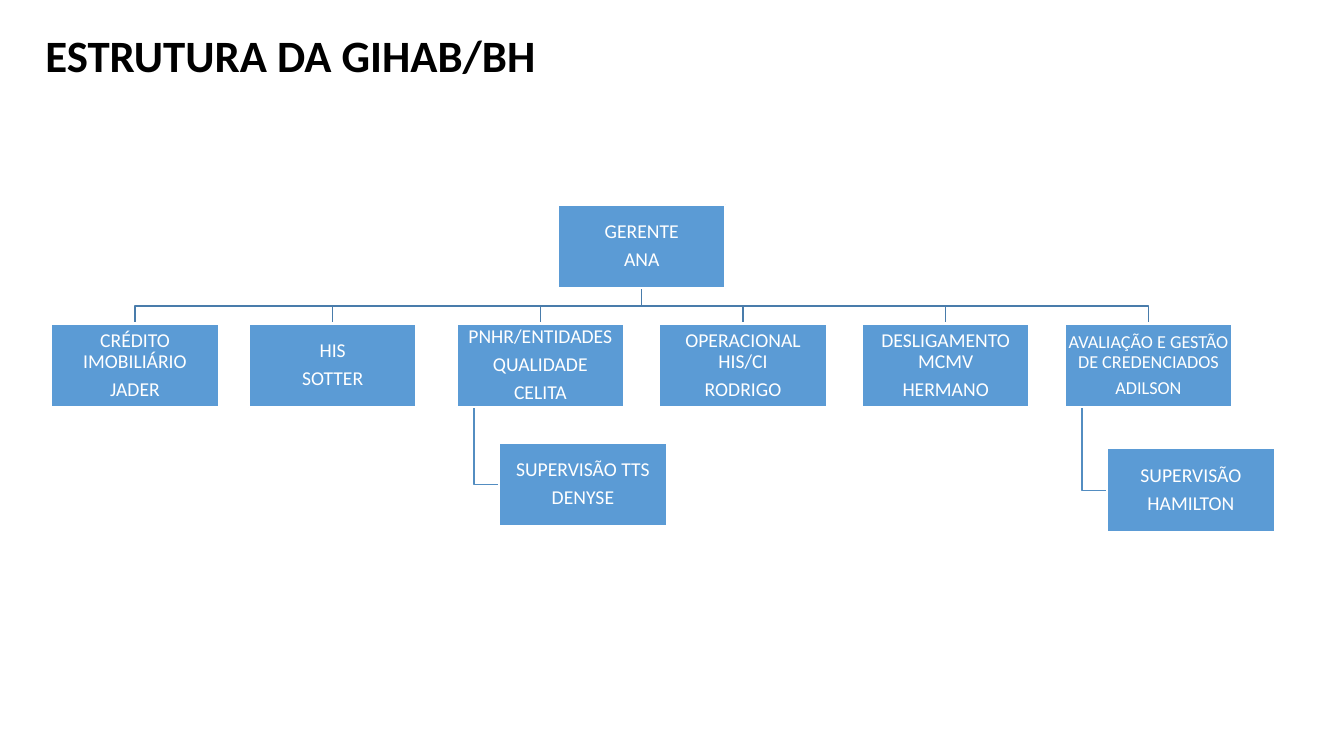
import pptx
import pptx.dml.color
import pptx.enum.shapes
import pptx.enum.text
import pptx.util

Inch = pptx.util.Inches
Point = pptx.util.Pt
Align = pptx.enum.text.PP_ALIGN
Anchor = pptx.enum.text.MSO_ANCHOR


class Theme:
    font = "Calibri"
    ink = "000000"
    paper = "FFFFFF"
    box = "5B9BD5"
    branch = "497CAB"
    twig = "538DC1"
    head = 32
    body = 14
    small = 13
    edge = 1.5
    thin = 1


def rgb(code):
    return pptx.dml.color.RGBColor.from_string(code)


def put(item, values):
    for name, value in values.items():
        setattr(item, name, value)


class Chart:
    left, top = 0.51, 2.03
    col, row = 2.01, 1.18
    width, height = 1.66, 0.83
    stem = 0.17

    def __init__(self, deck, theme):
        self.theme = theme
        self.slide = deck.slides.add_slide(deck.slide_layouts[5])

    def spot(self, col, row):
        return self.left + col * self.col, self.top + row * self.row

    def style(self, font, size, color, bold=False):
        put(font, {"name": self.theme.font, "size": Point(size), "bold": bold})
        font.color.rgb = rgb(color)

    def title(self, text):
        shape = self.slide.shapes.title
        put(shape, {"left": Inch(0.35), "top": Inch(0.22),
                    "width": Inch(12.15), "height": Inch(0.63)})
        frame = shape.text_frame
        put(frame, {"text": text, "word_wrap": True, "vertical_anchor": Anchor.TOP,
                    "auto_size": pptx.enum.text.MSO_AUTO_SIZE.NONE})
        para = frame.paragraphs[0]
        para.alignment = Align.LEFT
        self.style(para.font, self.theme.head, self.theme.ink, True)

    def line(self, points, color):
        start, *rest = [(Inch(x), Inch(y)) for x, y in points]
        form = self.slide.shapes.build_freeform(*start)
        form.add_line_segments(rest, close=False)
        shape = form.convert_to_shape()
        shape.shadow.inherit = False
        shape.fill.background()
        shape.line.color.rgb = rgb(color)
        shape.line.width = Point(self.theme.thin)

    def branch(self, boss, unit):
        x, y = self.spot(*boss)
        end, low = self.spot(*unit)
        x, end = x + self.width / 2, end + self.width / 2
        y += self.height
        mid = (y + low) / 2
        self.line([(x, y), (x, mid), (end, mid), (end, low)], self.theme.branch)

    def twig(self, boss, unit):
        x, y = self.spot(*boss)
        end, low = self.spot(*unit)
        x += self.stem
        mid = low + self.height / 2
        self.line([(x, y + self.height), (x, mid), (end, mid)], self.theme.twig)

    def box(self, place, lines, size):
        x, y = self.spot(*place)
        shape = self.slide.shapes.add_shape(
            pptx.enum.shapes.MSO_SHAPE.RECTANGLE,
            Inch(x), Inch(y), Inch(self.width), Inch(self.height))
        shape.shadow.inherit = False
        shape.fill.solid()
        shape.fill.fore_color.rgb = rgb(self.theme.box)
        shape.line.color.rgb = rgb(self.theme.paper)
        shape.line.width = Point(self.theme.edge)
        frame = shape.text_frame
        put(frame, {"text": "\n".join(lines), "word_wrap": True,
                    "vertical_anchor": Anchor.MIDDLE})
        put(frame, {f"margin_{side}": Inch(0.01)
                    for side in ("left", "top", "right", "bottom")})
        for para in frame.paragraphs:
            put(para, {"alignment": Align.CENTER, "line_spacing": 0.9,
                       "space_after": Point(0.35 * size)})
            self.style(para.font, size, self.theme.paper)


def main():
    deck = pptx.Presentation()
    put(deck, {"slide_width": Inch(13.33), "slide_height": Inch(7.5)})
    theme = Theme()
    chart = Chart(deck, theme)
    chart.title("ESTRUTURA DA GIHAB/BH")

    boss = (2.5, 0)
    units = {
        (0, 1): ["CRÉDITO IMOBILIÁRIO", "JADER"],
        (0.975, 1): ["HIS", "SOTTER"],
        (2, 1): ["PNHR/ENTIDADES", "QUALIDADE", "CELITA"],
        (3, 1): ["OPERACIONAL HIS/CI", "RODRIGO"],
        (4, 1): ["DESLIGAMENTO MCMV", "HERMANO"],
        (5, 1): ["AVALIAÇÃO E GESTÃO DE CREDENCIADOS", "ADILSON"],
    }
    teams = {
        (2.21, 2): ["SUPERVISÃO TTS", "DENYSE"],
        (5.21, 2.05): ["SUPERVISÃO", "HAMILTON"],
    }
    for place in units:
        chart.branch(boss, place)
    for place in teams:
        chart.twig((int(place[0]), 1), place)
    for place, lines in {boss: ["GERENTE", "ANA"], **units, **teams}.items():
        size = theme.small if place == (5, 1) else theme.body
        chart.box(place, lines, size)

    deck.save("out.pptx")


if __name__ == "__main__":
    main()
